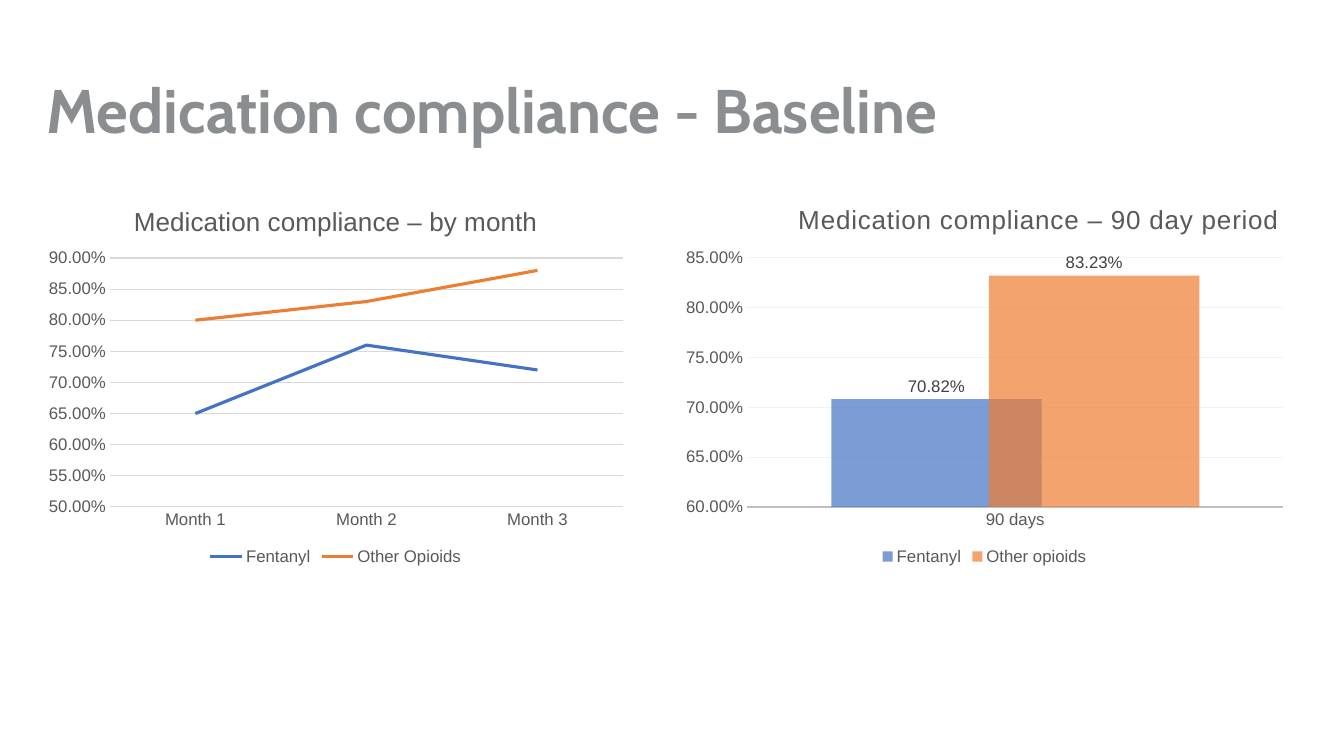
from lxml.etree import SubElement
from pptx import Presentation
from pptx.chart.data import CategoryChartData as Data
from pptx.dml.color import RGBColor
from pptx.enum.chart import XL_CHART_TYPE as Kind, XL_LABEL_POSITION as Spot
from pptx.enum.chart import XL_LEGEND_POSITION as Side, XL_TICK_MARK as Tick
from pptx.enum.text import MSO_ANCHOR as Anchor, PP_ALIGN as Align
from pptx.oxml import parse_xml
from pptx.oxml.ns import nsdecls, qn
from pptx.util import Inches, Pt

GREY = RGBColor(0x8B, 0x8E, 0x90)
TEXT = RGBColor(0x59, 0x59, 0x59)
DARK = RGBColor(0x40, 0x40, 0x40)
RULE = RGBColor(0xD9, 0xD9, 0xD9)
PALE = RGBColor(0xF2, 0xF2, 0xF2)
BASE = RGBColor(0xBF, 0xBF, 0xBF)
BLUE = RGBColor(0x44, 0x72, 0xC4)
ORANGE = RGBColor(0xED, 0x7D, 0x31)
PERCENT = "0.00%"

# "head" and "plot" are inches from the top left of the chart
MONTHS = {
    "kind": Kind.LINE,
    "title": "Medication compliance – by month",
    "cats": ["Month 1", "Month 2", "Month 3"],
    "rows": {"Fentanyl": (0.65, 0.76, 0.72),
             "Other Opioids": (0.8, 0.83, 0.88)},
    "range": (0.5, 0.9), "grid": RULE, "base": (RULE, 0.75),
    "head": (0.92, 0.11), "plot": (0.73, 0.69, 5.09, 2.47),
}
PERIOD = {
    "kind": Kind.COLUMN_CLUSTERED,
    "title": "Medication compliance – 90 day period",
    "cats": ["90 days"],
    "rows": {"Fentanyl": (0.7082,), "Other opioids": (0.8323,)},
    "range": (0.6, 0.85), "grid": PALE, "base": (BASE, 1.25),
    "head": (1.2, 0.09), "plot": (0.74, 0.69, 5.32, 2.47),
    "track": 50,
}


def style(font, color=TEXT, **more):
    look = {"name": "Arial", "size": Pt(12), "bold": False, **more}
    for key, value in look.items():
        setattr(font, key, value)
    font.color.rgb = color


def rule(line, color, width):
    line.color.rgb = color
    line.width = Pt(width)


def place(parent, index, spots, size):
    """Fix a chart part at x, y (and w, h), in inches within a chart of this size."""
    for old in parent.findall(qn("c:layout")):
        parent.remove(old)
    layout = parse_xml(f"<c:layout {nsdecls('c')}><c:manualLayout/></c:layout>")
    box = layout[0]
    shares = [spot / full for spot, full in zip(spots, size * 2)]
    tags = [("xMode", "edge"), ("yMode", "edge"), *zip("xywh", shares)]
    if len(spots) == 4:
        tags.insert(0, ("layoutTarget", "inner"))
    for tag, value in tags:
        SubElement(box, qn(f"c:{tag}")).set("val", str(value))
    parent.insert(index, layout)


def add_head(chart, text, track=0):
    frame = chart.chart_title.text_frame
    run = frame.paragraphs[0].add_run()
    run.text = text
    style(run.font, size=Pt(18.6))
    if track:
        run.font._element.set("spc", str(track))


def set_axes(chart, limits, grid, base):
    for axis in (chart.category_axis, chart.value_axis):
        axis.major_tick_mark = axis.minor_tick_mark = Tick.NONE
        style(axis.tick_labels.font)
    rule(chart.category_axis.format.line, *base)
    values = chart.value_axis
    values.minimum_scale, values.maximum_scale = limits
    values.major_unit = 0.05
    values.tick_labels.number_format = PERCENT
    values.tick_labels.number_format_is_linked = False
    values.format.line.fill.background()
    rule(values.major_gridlines.format.line, grid, 0.75)


def paint_line(row, color):
    row.smooth = False
    rule(row.format.line, color, 2.25)


def paint_bar(row, color):
    row.invert_if_negative = False
    fill = row.format.fill
    fill.solid()
    fill.fore_color.rgb = color
    shade = row._element.find(".//" + qn("a:srgbClr"))
    SubElement(shade, qn("a:alpha")).set("val", "70000")
    labels = row.data_labels
    look = {"show_value": True, "position": Spot.OUTSIDE_END,
            "number_format": PERCENT, "number_format_is_linked": False}
    for key, value in look.items():
        setattr(labels, key, value)
    style(labels.font, DARK)


def add_panel(slide, box, info):
    data = Data(number_format=PERCENT)
    data.categories = info["cats"]
    for name, values in info["rows"].items():
        data.add_series(name, values)
    chart = slide.shapes.add_chart(info["kind"], *map(Inches, box), data).chart
    style(chart.font)
    add_head(chart, info["title"], info.get("track", 0))
    set_axes(chart, info["range"], info["grid"], info["base"])
    chart.has_legend = True
    chart.legend.position = Side.BOTTOM
    chart.legend.include_in_layout = False
    style(chart.legend.font)
    plot = chart.plots[0]
    plot.vary_by_categories = False
    paint = paint_line
    if info["kind"] == Kind.COLUMN_CLUSTERED:
        paint = paint_bar
        plot.gap_width, plot.overlap = 80, 25
    for row, color in zip(plot.series, (BLUE, ORANGE)):
        paint(row, color)
    size = box[2:]
    place(chart.chart_title._element, 1, info["head"], size)
    place(chart._chartSpace.chart.plotArea, 0, info["plot"], size)


def add_title(slide, box, text):
    title = slide.shapes.title
    for key, value in zip(("left", "top", "width", "height"), box):
        setattr(title, key, Inches(value))
    frame = title.text_frame
    frame.text = text
    frame.vertical_anchor = Anchor.MIDDLE
    line = frame.paragraphs[0]
    line.alignment = Align.LEFT
    line.line_spacing = 0.9
    style(line.runs[0].font, GREY, name="Cabin", size=Pt(44), bold=True)


def main():
    deck = Presentation()
    deck.slide_width, deck.slide_height = Inches(13.33), Inches(7.5)
    slide = deck.slides.add_slide(deck.slide_layouts[5])
    add_title(slide, (0.36, 0.4, 12.49, 1.45), "Medication compliance - Baseline")
    add_panel(slide, (0.36, 1.87, 5.94, 3.78), MONTHS)
    add_panel(slide, (6.67, 1.87, 6.19, 3.78), PERIOD)
    deck.save("out.pptx")


if __name__ == "__main__":
    main()
